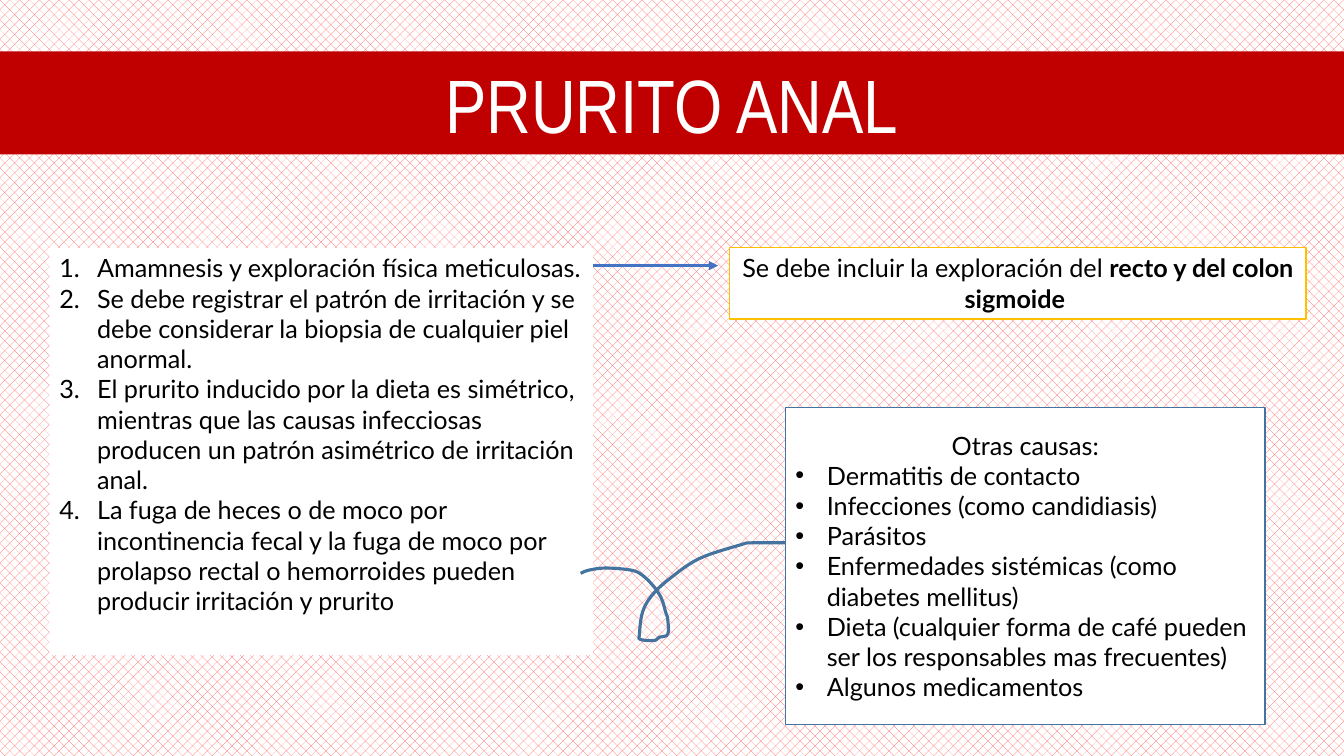
from pptx import Presentation
from pptx.dml.color import RGBColor
from pptx.enum.dml import MSO_PATTERN
from pptx.enum.shapes import MSO_CONNECTOR, MSO_SHAPE
from pptx.enum.text import MSO_ANCHOR, MSO_AUTO_SIZE, PP_ALIGN
from pptx.oxml.ns import qn
from pptx.util import Pt
from lxml.etree import SubElement

PX = 9525  # EMU in one px, at 96 px to the inch
COLORS = {"red": "C00000", "pattern": "FF5D5D", "white": "FFFFFF", "black": "000000",
          "arrow": "4472C4", "gold": "FFC000", "blue": "43739E"}
RGB = {name: RGBColor.from_string(value) for name, value in COLORS.items()}


def add_box(left, top, width, height, fill, anchor, line=None):
    shape = slide.shapes.add_shape(
        MSO_SHAPE.RECTANGLE, left * PX, top * PX, width * PX, height * PX)
    shape.shadow.inherit = False
    shape.fill.solid()
    shape.fill.fore_color.rgb = RGB[fill]
    if line:
        shape.line.color.rgb = RGB[line]
        shape.line.width = Pt(1)
    else:
        shape.line.fill.background()
    shape.text_frame.word_wrap = True
    shape.text_frame.vertical_anchor = anchor
    return shape.text_frame


def style_paragraph(paragraph, alignment, font="Lato", size=18, color="black"):
    paragraph.alignment = alignment
    paragraph.font.name = font
    paragraph.font.size = Pt(size)
    paragraph.font.color.rgb = RGB[color]


presentation = Presentation()
presentation.slide_width = 1280 * PX
presentation.slide_height = 720 * PX
slide = presentation.slides.add_slide(presentation.slide_layouts[6])

# Patterned background
background = slide.background.fill
background.patterned()
background.pattern = MSO_PATTERN.PERCENT_30
background.fore_color.rgb = RGB["pattern"]
background.back_color.rgb = RGB["white"]

# Title band
title = add_box(0, 49, 1280, 98, "red", MSO_ANCHOR.MIDDLE)
title.text = "PRURITO ANAL"
style_paragraph(title.paragraphs[0], PP_ALIGN.CENTER, "Arial Narrow", 54, "white")

# Numbered steps
steps = add_box(47, 236, 518, 388, "white", MSO_ANCHOR.TOP)
steps.auto_size = MSO_AUTO_SIZE.SHAPE_TO_FIT_TEXT
steps.text = "\n".join([
    "Amamnesis y exploración física meticulosas.",
    "Se debe registrar el patrón de irritación y se debe considerar la biopsia "
    "de cualquier piel anormal.",
    "El prurito inducido por la dieta es simétrico, mientras que las causas "
    "infecciosas producen un patrón asimétrico de irritación anal.",
    "La fuga de heces o de moco por incontinencia fecal y la fuga de moco por "
    "prolapso rectal o hemorroides pueden producir irritación y prurito"])

# Arrow to the examination note
arrow = slide.shapes.add_connector(
    MSO_CONNECTOR.STRAIGHT, 565 * PX, 253 * PX, 684 * PX, 253 * PX)
arrow.line.color.rgb = RGB["arrow"]
arrow.line.width = Pt(2.25)
SubElement(arrow.line._get_or_add_ln(), qn("a:tailEnd")).set("type", "triangle")
SubElement(arrow._element.spPr, qn("a:effectLst"))

# Examination note
note = add_box(695, 236, 549, 68, "white", MSO_ANCHOR.TOP, "gold")
note.auto_size = MSO_AUTO_SIZE.SHAPE_TO_FIT_TEXT
sentence = note.paragraphs[0]
sentence.add_run().text = "Se debe incluir la exploración del "
emphasis = sentence.add_run()
emphasis.text = "recto y del colon sigmoide "
emphasis.font.bold = True
style_paragraph(sentence, PP_ALIGN.CENTER)

# Looped line from the steps to the causes: a smooth curve through these knots
knots = [(553, 546), (561, 543), (577, 541), (601, 543), (612, 548), (623, 559),
         (630, 570), (634, 583), (636, 590), (636, 604), (628, 607), (623, 610),
         (610, 609), (609, 604), (612, 583), (621, 567), (638, 551), (666, 532),
         (705, 519), (716, 517), (748, 517)]
PIECES = 6  # straight pieces between two knots
ends_doubled = [knots[0], *knots, knots[-1]]
curve = []
for before, start, end, after in zip(
        ends_doubled, ends_doubled[1:], ends_doubled[2:], ends_doubled[3:]):
    for piece in range(1, PIECES + 1):
        t = piece / PIECES
        # Catmull-Rom weights of the four neighbouring knots
        weights = [(-t + 2 * t**2 - t**3) / 2, (2 - 5 * t**2 + 3 * t**3) / 2,
                   (t + 4 * t**2 - 3 * t**3) / 2, (t**3 - t**2) / 2]
        neighbours = list(zip(weights, (before, start, end, after)))
        x = sum(weight * knot[0] for weight, knot in neighbours)
        y = sum(weight * knot[1] for weight, knot in neighbours)
        curve.append((round(x * PX), round(y * PX)))
first_x, first_y = knots[0]
builder = slide.shapes.build_freeform(first_x * PX, first_y * PX)
builder.add_line_segments(curve, close=False)
loop = builder.convert_to_shape()
loop.shadow.inherit = False
loop.fill.background()
loop.line.color.rgb = RGB["blue"]
loop.line.width = Pt(2.25)

# Other causes
causes = add_box(748, 388, 457, 302, "white", MSO_ANCHOR.MIDDLE, "blue")
causes.text = "\n".join([
    "Otras causas:",
    "Dermatitis de contacto",
    "Infecciones (como candidiasis)",
    "Parásitos",
    "Enfermedades sistémicas (como diabetes mellitus)",
    "Dieta (cualquier forma de café pueden ser los responsables mas frecuentes)",
    "Algunos medicamentos"])
heading, *cause_items = causes.paragraphs
style_paragraph(heading, PP_ALIGN.CENTER)

# Numbers and bullets, with hanging indents
lists = [
    (steps.paragraphs, 36, "+mj-lt", "buAutoNum", "type", "arabicPeriod"),
    (cause_items, 30, "Arial", "buChar", "char", "•"),
]
for paragraphs, indent, marker_font, marker, attribute, value in lists:
    for paragraph in paragraphs:
        properties = paragraph._p.get_or_add_pPr()
        properties.set("marL", str(indent * PX))
        properties.set("indent", str(-indent * PX))
        SubElement(properties, qn("a:buFont")).set("typeface", marker_font)
        SubElement(properties, qn("a:" + marker)).set(attribute, value)
        style_paragraph(paragraph, PP_ALIGN.LEFT)

presentation.save("out.pptx")
